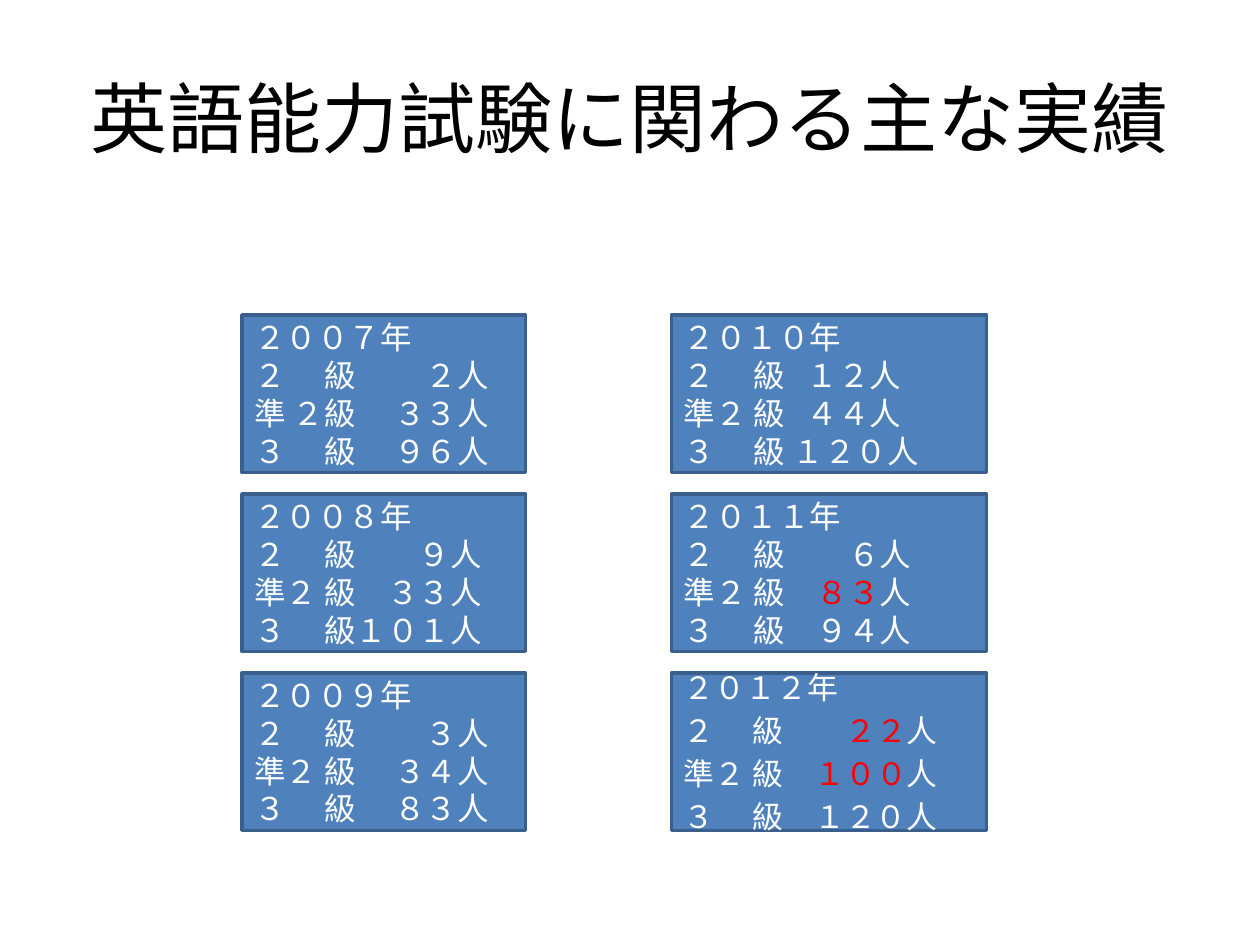
"""Build the slide of yearly English test results."""
import pptx
import pptx.dml.color
import pptx.enum.shapes
import pptx.enum.text
import pptx.util

Inches = pptx.util.Inches
Pt = pptx.util.Pt

TITLE = "英語能力試験に関わる主な実績"
COLUMNS = [
    {"left": 1.92, "width": 2.25, "years": [
        [("２００７年",), ("２　 級　 　２人",), ("準 ２級　 ３３人",), ("３　 級　 ９６人",)],
        [("２００８年",), ("２　 級　　９人",), ("準２ 級　３３人",), ("３　 級１０１人",)],
        [("２００９年",), ("２　 級　　 ３人",), ("準２ 級　 ３４人",), ("３　 級　 ８３人",)],
    ]},
    {"left": 5.33, "width": 2.5, "years": [
        [("２０１０年",), ("２　 級   １２人",), ("準２ 級   ４４人",), ("３　 級 １２０人",)],
        [("２０１１年",), ("２　 級　　６人",), ("準２ 級　", "８３", "人"), ("３　 級　９４人",)],
        [("２０１２年",), ("２　 級　　", "２２", "人"), ("準２ 級　", "１００", "人"),
         ("３　 級　１２０人",)],
    ]},
]
TOP, PITCH, HEIGHT = 2.5, 1.42, 1.25
LOOSE_YEAR = "２０１２年"
RUN_COLORS = ["FFFFFF", "FF0000", "FFFFFF"]


def color(value):
    return pptx.dml.color.RGBColor.from_string(value)


def add_title(slide):
    box = slide.shapes.add_textbox(Inches(0.5), Inches(0.3), Inches(9), Inches(1.25))
    frame = box.text_frame
    frame.word_wrap = True
    frame.vertical_anchor = pptx.enum.text.MSO_ANCHOR.MIDDLE
    paragraph = frame.paragraphs[0]
    paragraph.text = TITLE
    paragraph.alignment = pptx.enum.text.PP_ALIGN.CENTER
    paragraph.font.name = "Noto Sans CJK JP"
    paragraph.font.size = Pt(44)
    paragraph.font.color.rgb = color("000000")


def add_year(slide, left, top, width, lines):
    shape = slide.shapes.add_shape(
        pptx.enum.shapes.MSO_SHAPE.RECTANGLE,
        Inches(left), Inches(top), Inches(width), Inches(HEIGHT))
    shape.shadow.inherit = False
    shape.fill.solid()
    shape.fill.fore_color.rgb = color("4F81BD")
    shape.line.color.rgb = color("3A5F8C")
    shape.line.width = Pt(2)
    frame = shape.text_frame
    frame.word_wrap = True
    frame.vertical_anchor = pptx.enum.text.MSO_ANCHOR.MIDDLE
    loose = lines[0][0] == LOOSE_YEAR
    for index, parts in enumerate(lines):
        paragraph = frame.add_paragraph() if index else frame.paragraphs[0]
        paragraph.alignment = pptx.enum.text.PP_ALIGN.LEFT
        paragraph.font.name = "Calibri"
        paragraph.font.size = Pt(17.6 if loose else 18)
        if loose:
            paragraph.space_before = Pt(3.5)
        for text, run_color in zip(parts, RUN_COLORS):
            run = paragraph.add_run()
            run.text = text
            run.font.color.rgb = color(run_color)


def main():
    presentation = pptx.Presentation()
    presentation.slide_width = Inches(10)
    presentation.slide_height = Inches(7.5)
    slide = presentation.slides.add_slide(presentation.slide_layouts[6])
    add_title(slide)
    for column in COLUMNS:
        for row, lines in enumerate(column["years"]):
            add_year(slide, column["left"], TOP + row * PITCH, column["width"], lines)
    presentation.save("out.pptx")


if __name__ == "__main__":
    main()
